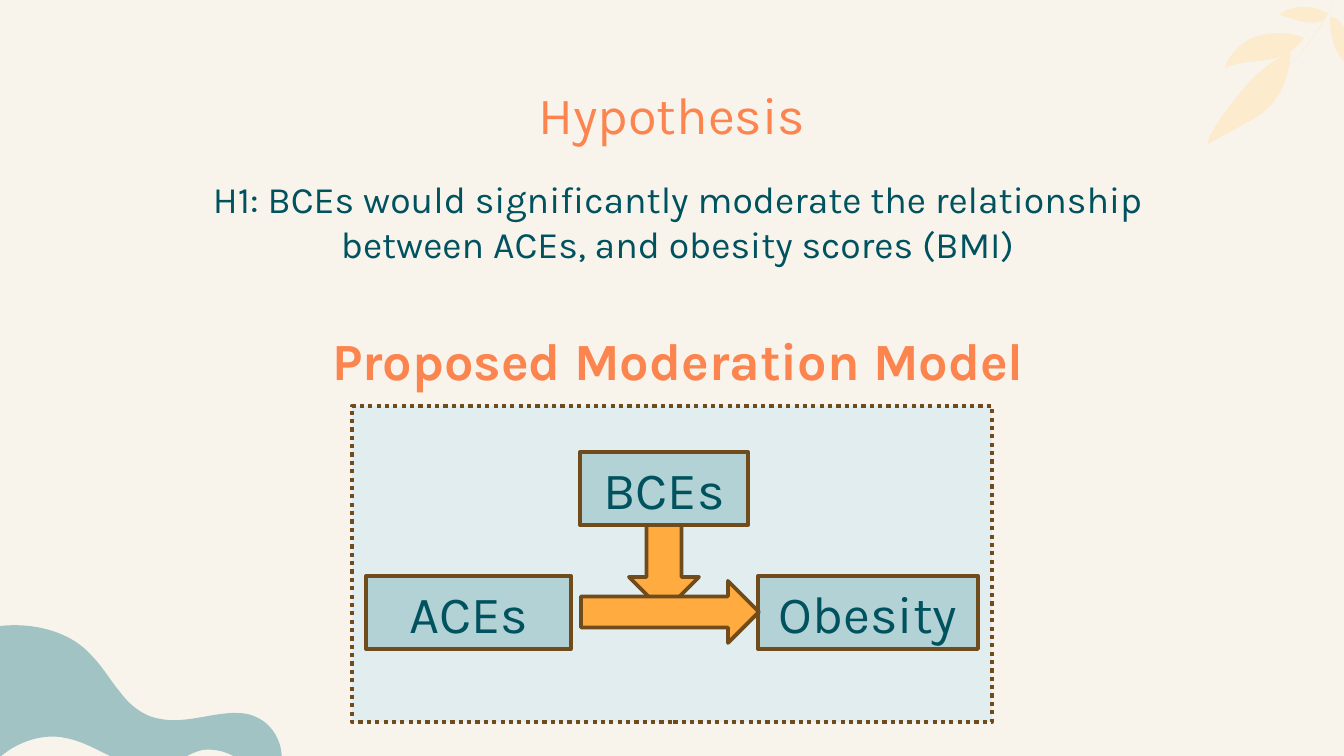
"""Build the hypothesis slide with its proposed moderation model."""

from dataclasses import dataclass
from typing import Any, NamedTuple

from lxml.etree import SubElement
from pptx import Presentation
from pptx.dml.color import RGBColor
from pptx.enum.dml import MSO_LINE
from pptx.enum.shapes import MSO_SHAPE
from pptx.enum.text import MSO_ANCHOR, PP_ALIGN
from pptx.oxml.ns import qn
from pptx.util import Emu, Pt

EMU_PER_PX = 914400 / 134.4
Point = tuple[int, int]


@dataclass(frozen=True)
class Theme:
    font: str = "Karla"
    background: str = "F8F4EC"
    leaf: str = "FDEAC8"
    wave: str = "6BA4AA"
    panel: str = "E1EDEE"
    box: str = "B3D2D5"
    arrow: str = "FFAB40"
    outline: str = "704B1C"
    heading: str = "FC854F"
    text: str = "00525F"
    heading_size: int = 28
    body_size: int = 20
    line_width: float = 2
    panel_line_width: float = 2.25
    leaf_opacity: int = 84
    wave_opacity: int = 61


THEME = Theme()


class Frame(NamedTuple):
    left: int
    top: int
    width: int
    height: int


class Line(NamedTuple):
    text: str
    size: int
    color: str
    bold: bool = False
    space_before: float = 0


class Block(NamedTuple):
    frame: Frame
    fill: str
    kind: MSO_SHAPE = MSO_SHAPE.RECTANGLE
    label: str = ""
    rotation: int = 0
    line_width: float = THEME.line_width
    dash: MSO_LINE | None = None


class Curve(NamedTuple):
    start: Point
    segments: list[tuple[Point, ...]]
    fill: str = THEME.leaf
    opacity: int = THEME.leaf_opacity


TEXTS = [
    (Frame(46, 69, 1252, 84), [Line("Hypothesis", THEME.heading_size, THEME.heading)]),
    (Frame(143, 163, 1070, 144), [
        Line("H1: BCEs would significantly moderate the relationship between ACEs, "
             "and obesity scores (BMI)", THEME.body_size, THEME.text),
        Line("Proposed Moderation Model", THEME.heading_size, THEME.heading, True, 33.5),
    ]),
]

PANEL = Block(Frame(352, 406, 640, 316), THEME.panel,
              line_width=THEME.panel_line_width, dash=MSO_LINE.ROUND_DOT)

MODEL = [
    Block(Frame(758, 576, 220, 73), THEME.box, label="Obesity"),
    Block(Frame(599, 512, 130, 70), THEME.arrow, MSO_SHAPE.RIGHT_ARROW, rotation=90),
    Block(Frame(580, 452, 168, 73), THEME.box, label="BCEs"),
    Block(Frame(581, 581, 178, 62), THEME.arrow, MSO_SHAPE.RIGHT_ARROW),
    Block(Frame(366, 576, 205, 73), THEME.box, label="ACEs"),
]

CURVES = [
    Curve((1334, 0), [((1321, 29), (1303, 53), (1283, 70)),
                      ((1304, 53), (1322, 29), (1334, 0))]),
    Curve((1291, 52), [((1276, 58), (1264, 68), (1253, 78)),
                       ((1238, 94), (1225, 111), (1215, 127)),
                       ((1211, 133), (1208, 138), (1208, 144)),
                       ((1248, 122),),
                       ((1272, 110), (1288, 90), (1291, 52))]),
    Curve((1304, 38), [((1285, 30), (1260, 32), (1245, 42)),
                       ((1236, 49), (1228, 57), (1225, 68)),
                       ((1242, 61), (1255, 62), (1268, 60)),
                       ((1284, 58), (1298, 48), (1304, 38))]),
    Curve((1330, 17), [((1330, 30), (1332, 50), (1346, 64)),
                       ((1352, 66), (1350, 40), (1344, 28)),
                       ((1340, 20), (1334, 16), (1330, 17))]),
    Curve((1279, 15), [((1290, 6), (1305, 5), (1318, 9)),
                       ((1321, 10), (1325, 12), (1327, 14)),
                       ((1326, 22), (1315, 24), (1305, 22)),
                       ((1296, 21), (1288, 17), (1279, 15))]),
    Curve((280, 745), [((282, 751), (282, 758), (282, 765)),
                       ((255, 774),),
                       ((241, 759), (226, 748), (203, 750)),
                       ((188, 753), (176, 765), (163, 765)),
                       ((144, 770), (126, 763), (112, 757)),
                       ((97, 750), (82, 741), (65, 738)),
                       ((38, 732), (4, 747), (-11, 770)),
                       ((-12, 628),),
                       ((27, 620), (69, 630), (91, 655)),
                       ((103, 667), (110, 680), (120, 692)),
                       ((129, 704), (142, 716), (160, 719)),
                       ((188, 725), (220, 709), (247, 714)),
                       ((265, 718), (276, 731), (280, 745))],
          THEME.wave, THEME.wave_opacity),
]


def px(value: int) -> Emu:
    """Convert pixels to EMU."""
    return Emu(round(value * EMU_PER_PX))


def apply_format(target: Any, values: dict[str, Any]) -> None:
    """Set each named attribute on the target."""
    for name, value in values.items():
        setattr(target, name, value)


def fill_solid(shape: Any, color: str) -> None:
    """Fill a shape with one colour and drop its shadow."""
    shape.shadow.inherit = False
    shape.fill.solid()
    shape.fill.fore_color.rgb = RGBColor.from_string(color)


def write_line(paragraph: Any, line: Line) -> None:
    """Write one centred, styled paragraph."""
    apply_format(paragraph, {"alignment": PP_ALIGN.CENTER, "space_before": Pt(line.space_before)})
    run = paragraph.add_run()
    run.text = line.text
    apply_format(run.font, {"name": THEME.font, "size": Pt(line.size), "bold": line.bold})
    run.font.color.rgb = RGBColor.from_string(line.color)


def draw_text(slide: Any, frame: Frame, lines: list[Line]) -> None:
    """Draw a text box with one paragraph per line."""
    text_frame = slide.shapes.add_textbox(*map(px, frame)).text_frame
    margins = {f"margin_{side}": px(13) for side in ("left", "top", "right", "bottom")}
    apply_format(text_frame, {"word_wrap": True, "vertical_anchor": MSO_ANCHOR.TOP, **margins})
    for index, line in enumerate(lines):
        write_line(text_frame.add_paragraph() if index else text_frame.paragraphs[0], line)


def draw_block(slide: Any, block: Block) -> None:
    """Draw an outlined preset shape with an optional label."""
    shape = slide.shapes.add_shape(block.kind, *map(px, block.frame))
    fill_solid(shape, block.fill)
    shape.rotation = block.rotation
    shape.line.color.rgb = RGBColor.from_string(THEME.outline)
    apply_format(shape.line, {"width": Pt(block.line_width), "dash_style": block.dash})
    if block.label:
        apply_format(shape.text_frame, {"word_wrap": True, "vertical_anchor": MSO_ANCHOR.MIDDLE})
        write_line(shape.text_frame.paragraphs[0],
                   Line(block.label, THEME.heading_size, THEME.text))


def bend_segments(shape: Any, segments: list[tuple[Point, ...]]) -> None:
    """Turn each run of three line points into one cubic segment."""
    path = next(shape.element.iter(qn("a:path")))
    lines = iter(path.findall(qn("a:lnTo")))
    for segment in segments:
        parts = [next(lines) for _ in segment]
        if len(parts) == 3:
            cubic = SubElement(path, qn("a:cubicBezTo"))
            path.replace(parts[0], cubic)
            for part in parts:
                cubic.append(part.find(qn("a:pt")))
            for part in parts[1:]:
                path.remove(part)


def draw_curve(slide: Any, curve: Curve) -> None:
    """Draw a translucent closed outline from cubic and straight segments."""
    builder = slide.shapes.build_freeform(*curve.start, scale=EMU_PER_PX)
    builder.add_line_segments([point for segment in curve.segments for point in segment])
    shape = builder.convert_to_shape()
    bend_segments(shape, curve.segments)
    fill_solid(shape, curve.fill)
    shape.line.fill.background()
    color = next(shape.element.iter(qn("a:srgbClr")))
    SubElement(color, qn("a:alpha"), val=str(curve.opacity * 1000))


def main() -> None:
    """Build and save the presentation."""
    presentation = Presentation()
    apply_format(presentation, {"slide_width": px(1344), "slide_height": px(756)})
    slide = presentation.slides.add_slide(presentation.slide_layouts[6])
    slide.background.fill.solid()
    slide.background.fill.fore_color.rgb = RGBColor.from_string(THEME.background)
    for curve in CURVES:
        draw_curve(slide, curve)
    draw_block(slide, PANEL)
    for frame, lines in TEXTS:
        draw_text(slide, frame, lines)
    for block in MODEL:
        draw_block(slide, block)
    presentation.save("out.pptx")


if __name__ == "__main__":
    main()
